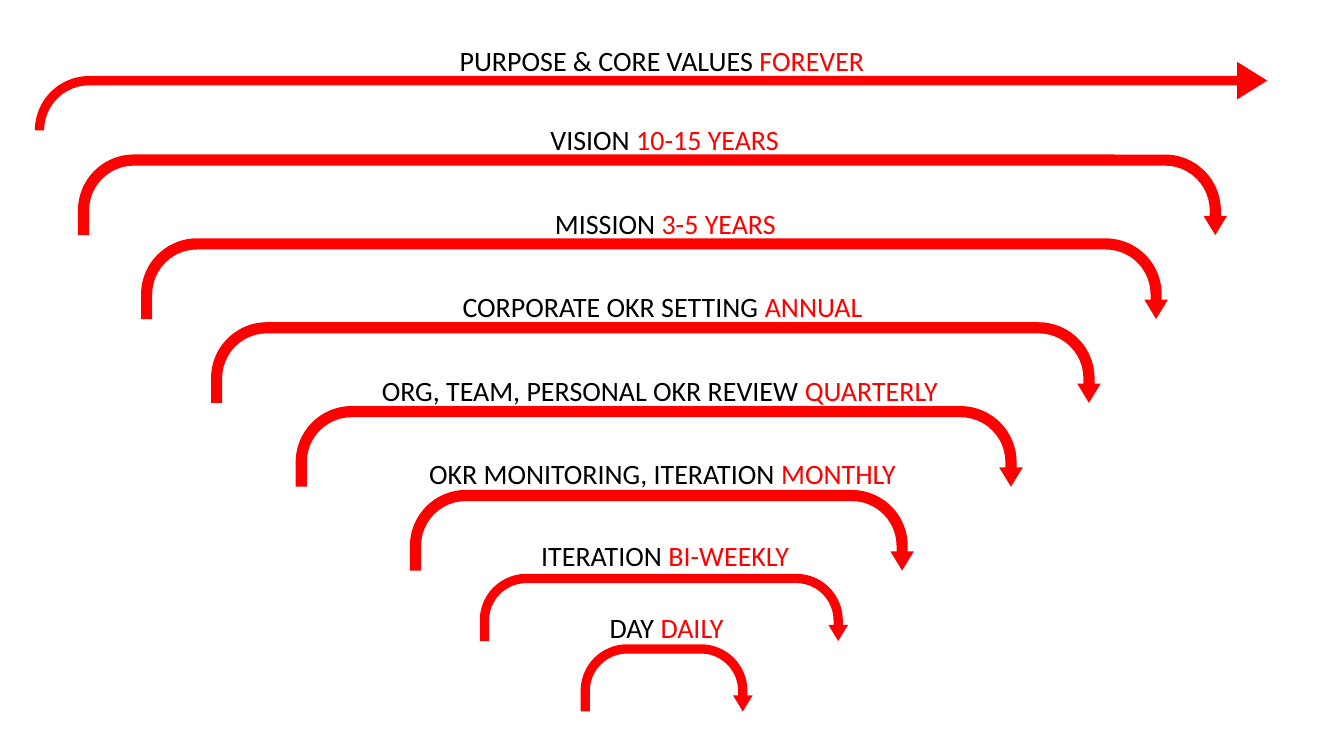
import pptx
import pptx.util
import pptx.dml.color
import pptx.enum.shapes
import pptx.enum.text

COLUMNS, ROWS = 100, 56.25
WIDTH = pptx.util.Inches(10)
HEIGHT = WIDTH * 9 // 16
RED, BLACK = "FF0000", "000000"
LABEL_ROWS = 2.5
CYCLE_GAP = 0.24

BENT = pptx.enum.shapes.MSO_SHAPE.BENT_ARROW
UTURN = pptx.enum.shapes.MSO_SHAPE.U_TURN_ARROW
BENDS = {
    BENT: (0.136, 0.275, 0.442, 0.967),
    UTURN: (0.138, 0.146, 0.239, 0.694, 1),
}

PURPOSE = ("PURPOSE & CORE VALUES ", "FOREVER")
CYCLES = [
    ("VISION ", "10-15 YEARS", 5.8, 85.5, 6, 36, 26.9, 2.4),
    ("MISSION ", "3-5 YEARS", 10.5, 76.4, 6, 36.4, 26.2, 2.4),
    ("CORPORATE OKR SETTING ", "ANNUAL", 15.7, 66.2, 6, 25.3, 48, 2.4),
    ("ORG, TEAM, PERSONAL OKR REVIEW ", "QUARTERLY", 22, 54.1, 6, 15.1, 68, 2.4),
    ("OKR MONITORING, ITERATION ", "MONTHLY", 30.5, 37.5, 6, 25.8, 47, 2.5),
    ("ITERATION ", "BI-WEEKLY", 35.7, 27.4, 5, 34.7, 29.6, 2.6),
    ("DAY ", "DAILY", 43.2, 12.8, 5, 42.7, 13.8, 2.5),
]


def color(value):
    return pptx.dml.color.RGBColor.from_string(value)


def place(column, row, columns, rows):
    return (
        round(WIDTH * column / COLUMNS),
        round(HEIGHT * row / ROWS),
        round(WIDTH * columns / COLUMNS),
        round(HEIGHT * rows / ROWS),
    )


def add_arrow(slide, kind, box):
    arrow = slide.shapes.add_shape(kind, *place(*box))
    arrow.shadow.inherit = False
    arrow.fill.solid()
    arrow.fill.fore_color.rgb = color(RED)
    arrow.line.fill.background()
    for index, bend in enumerate(BENDS[kind]):
        arrow.adjustments[index] = bend


def add_label(slide, activity, period, box):
    frame = slide.shapes.add_textbox(*place(*box)).text_frame
    frame.word_wrap = True
    frame.auto_size = pptx.enum.text.MSO_AUTO_SIZE.SHAPE_TO_FIT_TEXT
    frame.margin_left = frame.margin_right = 0
    frame.margin_top = frame.margin_bottom = 0
    line = frame.paragraphs[0]
    line.alignment = pptx.enum.text.PP_ALIGN.CENTER
    for words, ink in ((activity, BLACK), (period, RED)):
        run = line.add_run()
        run.text = words
        run.font.name = "Calibri"
        run.font.size = pptx.util.Pt(15)
        run.font.color.rgb = color(ink)


def add_cycle(slide, kind, wording, arrow_box, label_left, label_columns, rise):
    add_arrow(slide, kind, arrow_box)
    label_box = (label_left, arrow_box[1] - rise, label_columns, LABEL_ROWS)
    add_label(slide, *wording, label_box)


def add_planning_levels(slide, top):
    for activity, period, left, columns, rows, label_left, label_columns, rise in CYCLES:
        arrow_box = (left, top, columns, rows)
        add_cycle(slide, UTURN, (activity, period), arrow_box,
                  label_left, label_columns, rise)
        top += rows + CYCLE_GAP


def main():
    deck = pptx.Presentation()
    deck.slide_width, deck.slide_height = WIDTH, HEIGHT
    slide = deck.slides.add_slide(deck.slide_layouts[6])
    add_cycle(slide, BENT, PURPOSE, (2.6, 4.6, 91.7, 5.1), 24.3, 49.9, 1.4)
    add_planning_levels(slide, 11.5)
    deck.save("out.pptx")


if __name__ == "__main__":
    main()
